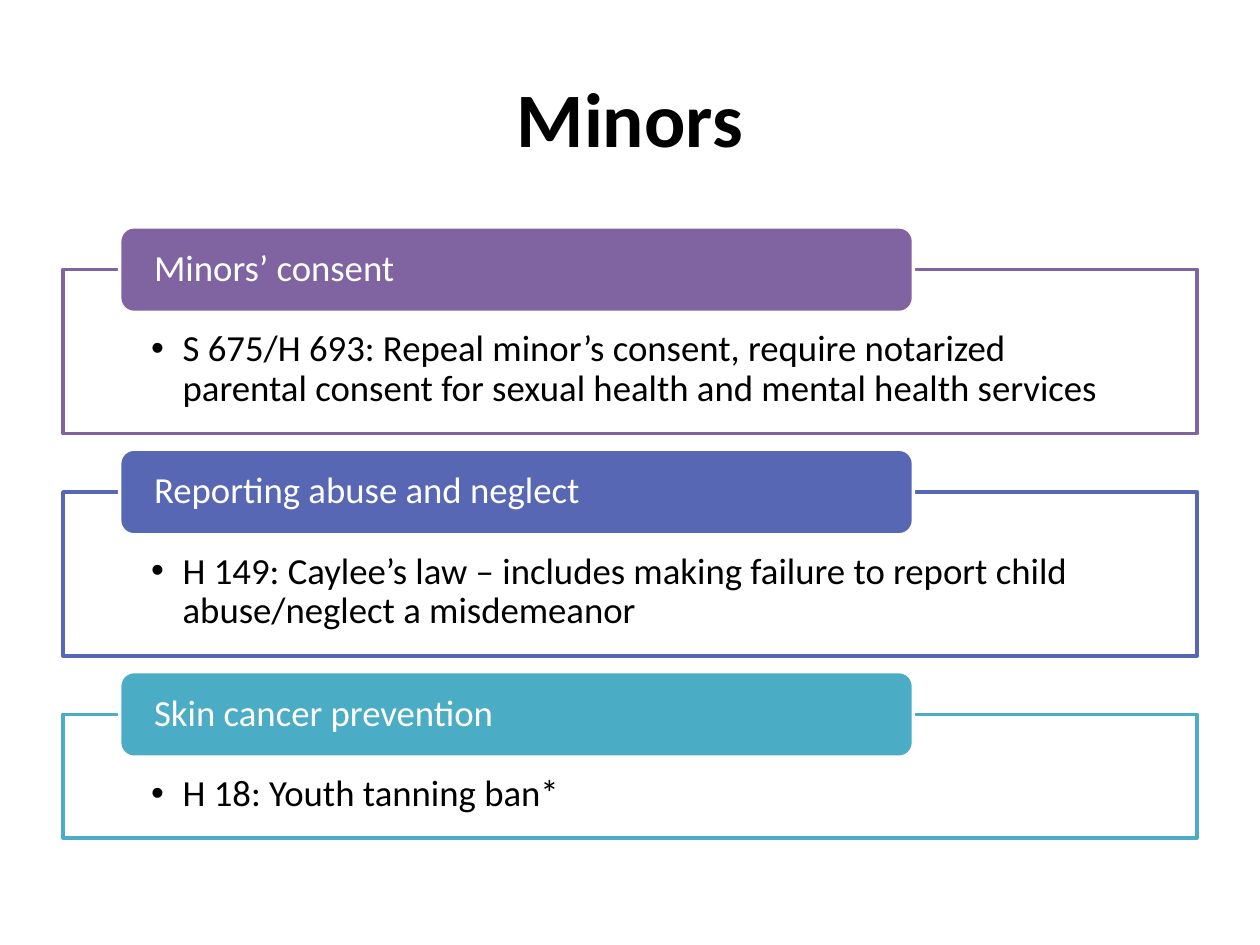
"""Build the "Minors" slide: three headed boxes of legislation."""
import lxml.etree
import pptx
import pptx.dml.color
import pptx.enum.shapes
import pptx.enum.text
import pptx.oxml.ns
import pptx.util

Inches, Pt = pptx.util.Inches, pptx.util.Pt
qn = pptx.oxml.ns.qn
MSO = pptx.enum.shapes.MSO_SHAPE
ANCHOR = pptx.enum.text.MSO_ANCHOR
ALIGN = pptx.enum.text.PP_ALIGN


def rgb(value):
    return pptx.dml.color.RGBColor.from_string(value)


def add_box(s, kind, at, fill, line, text, color, insets, anchor):
    sp = s.shapes.add_shape(kind, *[Inches(v) for v in at])
    sp.shadow.inherit = False
    sp.fill.solid()
    sp.fill.fore_color.rgb = rgb(fill)
    sp.line.color.rgb = rgb(line)
    sp.line.width = Pt(2)
    tf = sp.text_frame
    tf.word_wrap = True
    tf.vertical_anchor = anchor
    tf.margin_left, tf.margin_top, tf.margin_right, tf.margin_bottom = [Inches(v) for v in insets]
    p = tf.paragraphs[0]
    p.alignment = ALIGN.LEFT
    p.line_spacing = 0.9
    r = p.add_run()
    r.text = text
    r.font.name = "Calibri"
    r.font.size = Pt(21)
    r.font.color.rgb = rgb(color)
    return sp


prs = pptx.Presentation()
prs.slide_width, prs.slide_height = Inches(10), Inches(7.5)
s = prs.slides.add_slide(prs.slide_layouts[5])

title = s.shapes.title
title.left, title.top, title.width, title.height = [Inches(v) for v in (0.5, 0.3, 9, 1.25)]
title.text_frame.vertical_anchor = ANCHOR.MIDDLE
p = title.text_frame.paragraphs[0]
p.alignment = ALIGN.CENTER
r = p.add_run()
r.text = "Minors"
r.font.name = "Calibri"
r.font.size = Pt(44)
r.font.bold = True
r.font.color.rgb = rgb("000000")

sections = [
    ("Minors’ consent",
     "S 675/H 693: Repeal minor’s consent, require notarized parental consent "
     "for sexual health and mental health services", "8064A2", 1.3),
    ("Reporting abuse and neglect",
     "H 149: Caylee’s law – includes making failure to report child "
     "abuse/neglect a misdemeanor", "5767B4", 1.3),
    ("Skin cancer prevention", "H 18: Youth tanning ban*", "4BACC6", 0.98),
]
gap = 0.465
top = 2.14
for heading, item, color, height in sections:
    sp = add_box(s, MSO.RECTANGLE, (0.5, top, 9, height), "FFFFFF", color,
                 item, "000000", (0.7, 0.48, 0.7, 0.16), ANCHOR.TOP)
    pPr = sp.text_frame.paragraphs[0]._p.get_or_add_pPr()
    pPr.set("marL", str(Inches(0.25)))
    pPr.set("indent", str(Inches(-0.25)))
    lxml.etree.SubElement(pPr, qn("a:buFont")).set("typeface", "Arial")
    lxml.etree.SubElement(pPr, qn("a:buChar")).set("char", "•")
    add_box(s, MSO.ROUNDED_RECTANGLE, (0.95, top - 0.34, 6.3, 0.68), color, "FFFFFF",
            heading, "FFFFFF", (0.24, 0, 0.24, 0), ANCHOR.MIDDLE)
    top += height + gap

prs.save("out.pptx")
